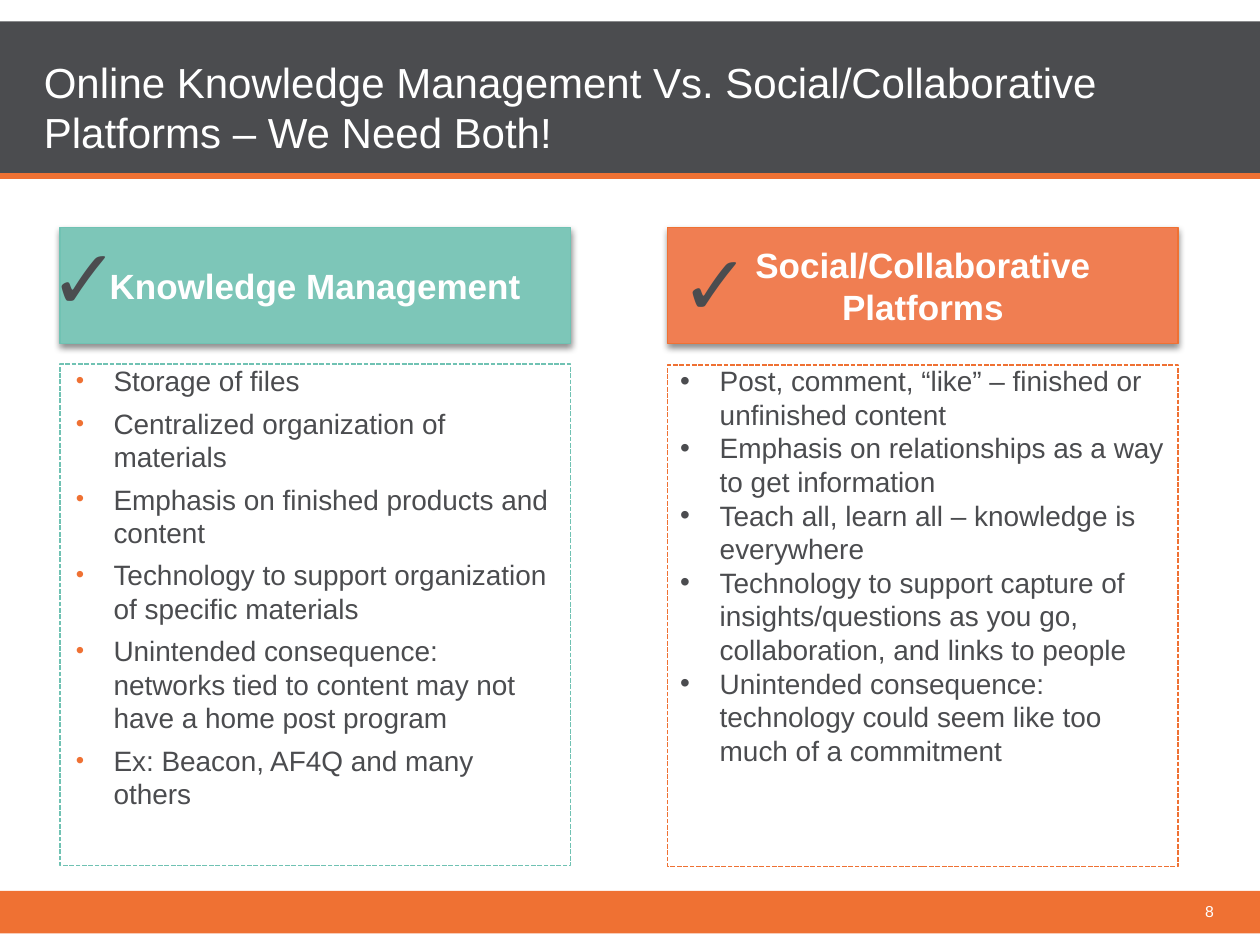
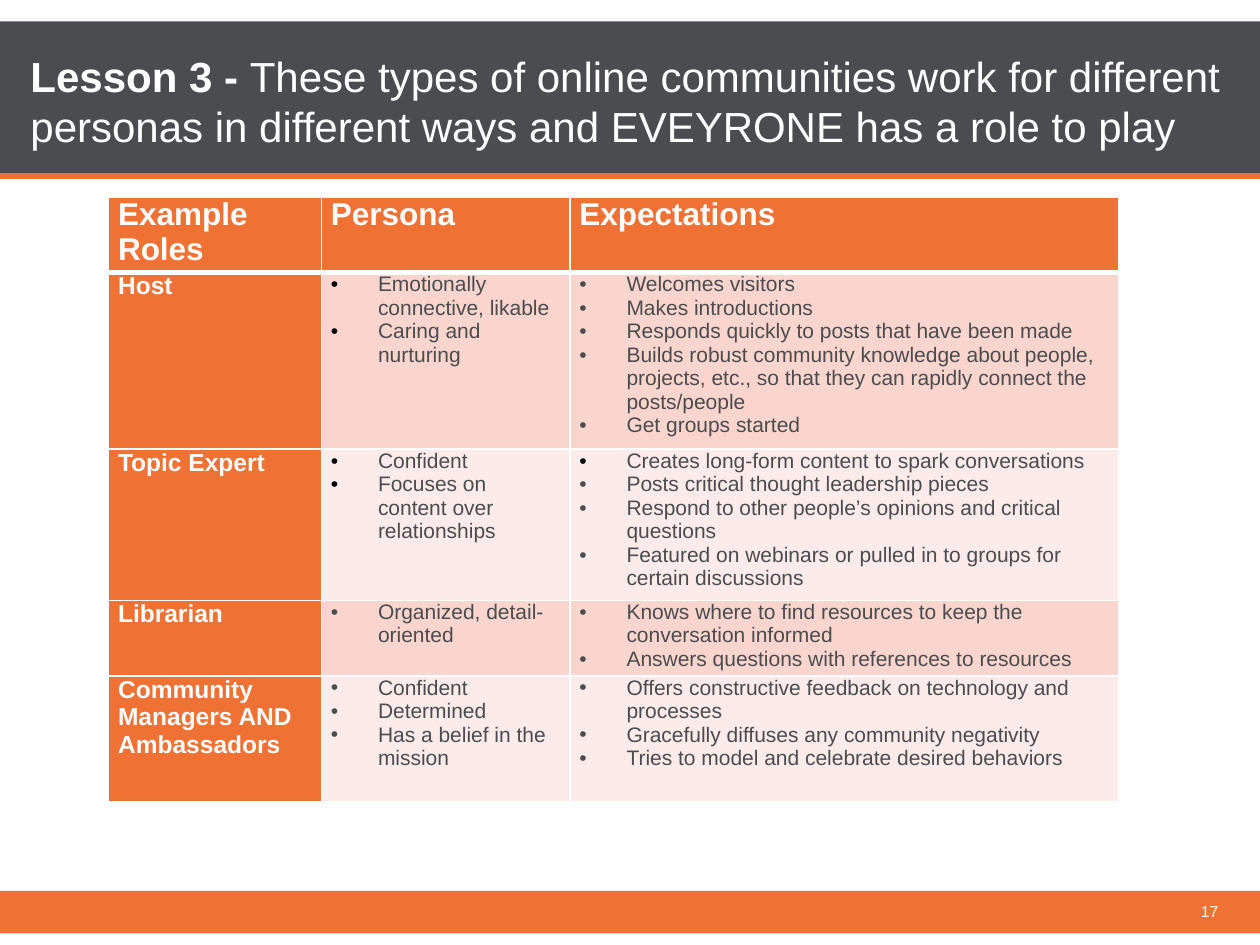
"""Build two slides on online communities: a platform comparison and a table of roles."""
from dataclasses import dataclass
from typing import Optional

from lxml import etree
from pptx import Presentation
from pptx.dml.color import RGBColor
from pptx.enum.dml import MSO_LINE
from pptx.enum.shapes import MSO_CONNECTOR, MSO_SHAPE
from pptx.enum.text import MSO_ANCHOR, MSO_AUTO_SIZE, PP_ALIGN
from pptx.oxml.ns import qn
from pptx.util import Cm, Pt

RECTANGLE = MSO_SHAPE.RECTANGLE
STRAIGHT = MSO_CONNECTOR.STRAIGHT
FINE_DASH = MSO_LINE.SQUARE_DOT
LEFT, CENTER = PP_ALIGN.LEFT, PP_ALIGN.CENTER
TOP, MIDDLE, BOTTOM = MSO_ANCHOR.TOP, MSO_ANCHOR.MIDDLE, MSO_ANCHOR.BOTTOM
FIXED_SIZE = MSO_AUTO_SIZE.NONE

FONT = "Arial"
WHITE, BLACK, GREY = "FFFFFF", "000000", "4B4C4F"
ORANGE, TEAL = "EF7133", "70C2B3"
ROW_TINTS = ("F9D5CE", "FCEBE8")
PAGE_WIDTH, PAGE_HEIGHT = 25.4, 19.05
TITLE_ONLY = 5


@dataclass(frozen=True)
class Area:
    """A rectangle on the page in centimetres."""
    left: float
    top: float
    width: float
    height: float

    def lengths(self) -> tuple:
        """Return left, top, width and height as lengths."""
        return Cm(self.left), Cm(self.top), Cm(self.width), Cm(self.height)


@dataclass(frozen=True)
class Style:
    """The look of a run of text."""
    size: float
    color: str = GREY
    bold: bool = False


@dataclass(frozen=True)
class Bullet:
    """The indent, colour and relative size of a bullet."""
    indent: float
    color: Optional[str] = None
    percent: Optional[int] = None


@dataclass(frozen=True)
class Platform:
    """One column of the comparison."""
    heading: str
    fill: str
    line: str
    left: float
    frame_top: float
    check: Area
    list_area: Area
    bullet: Bullet
    gap: float
    points: tuple


@dataclass(frozen=True)
class Points:
    """The bulleted lines of a table cell, the first few with black bullets."""
    lines: tuple
    black: int = 0


@dataclass(frozen=True)
class Role:
    """One row of the roles table."""
    name: str
    height: float
    persona: Points
    expectations: Points


HEADING = Style(20, WHITE, True)
BODY = Style(16)
CHECK = Style(48)
TITLE = Style(24, WHITE)
TITLE_BOLD = Style(24, WHITE, True)
PAGE_NUMBER = Style(9, WHITE)
TABLE_HEAD = Style(18, WHITE, True)
ROLE_NAME = Style(14, WHITE, True)
TABLE_BODY = Style(12)

PLATFORMS = (
    Platform("Knowledge Management", "7DC6B8", TEAL, 1.21, 7.34,
             Area(0.75, 4.42, 3.84, 2.31), Area(1.28, 7.21, 10.21, 10.62),
             Bullet(0.76, ORANGE, 85), 5, (
                 "Storage of files",
                 "Centralized organization of materials",
                 "Emphasis on finished products and content",
                 "Technology to support organization of specific materials",
                 "Unintended consequence: networks tied to content may not have a home post program",
                 "Ex: Beacon, AF4Q and many others")),
    Platform("Social/Collaborative Platforms", "F07E52", ORANGE, 13.46, 7.36,
             Area(13.46, 4.55, 3.84, 2.31), Area(13.46, 7.21, 10.29, 8.46),
             Bullet(0.8), 0, (
                 "Post, comment, “like” – finished or unfinished content",
                 "Emphasis on relationships as a way to get information",
                 "Teach all, learn all – knowledge is everywhere",
                 "Technology to support capture of insights/questions as you go, "
                 "collaboration, and links to people",
                 "Unintended consequence: technology could seem like too much of a commitment")),
)

TABLE_HEADINGS = ("Example Roles", "Persona", "Expectations")
COLUMN_WIDTHS = (4.29, 5.01, 11.07)
HEAD_HEIGHT = 1.5
ROLES = (
    Role("Host", 3.54,
         Points(("Emotionally connective, likable", "Caring and nurturing"), 2),
         Points(("Welcomes visitors", "Makes introductions",
                 "Responds quickly to posts that have been made",
                 "Builds robust community knowledge about people, projects, etc., "
                 "so that they can rapidly connect the posts/people",
                 "Get groups started"))),
    Role("Topic Expert", 3.04,
         Points(("Confident", "Focuses on content over relationships"), 2),
         Points(("Creates long-form content to spark conversations",
                 "Posts critical thought leadership pieces",
                 "Respond to other people’s opinions and critical questions",
                 "Featured on webinars or pulled in to groups for certain discussions"), 1)),
    Role("Librarian", 1.52,
         Points(("Organized, detail-oriented",)),
         Points(("Knows where to find resources to keep the conversation informed",
                 "Answers questions with references to resources"))),
    Role("Community Managers AND Ambassadors", 2.54,
         Points(("Confident", "Determined", "Has a belief in the mission")),
         Points(("Offers constructive feedback on technology and processes",
                 "Gracefully diffuses any community negativity",
                 "Tries to model and celebrate desired behaviors"))),
)


def rgb(color: str) -> RGBColor:
    """Turn a hex string into a colour."""
    return RGBColor.from_string(color)


def add_color(parent, color: str):
    """Append a colour element to an XML parent and return it."""
    return etree.SubElement(parent, qn("a:srgbClr"), val=color)


def add_span(para, text: str, style: Style) -> None:
    """Append one formatted run."""
    span = para.add_run()
    span.text = text
    font = span.font
    font.name, font.size, font.bold = FONT, Pt(style.size), style.bold
    font.color.rgb = rgb(style.color)


def set_bullet(para, bullet: Bullet) -> None:
    """Give a paragraph a round bullet with a hanging indent."""
    props = para._p.get_or_add_pPr()
    props.set("marL", str(Cm(bullet.indent)))
    props.set("indent", str(-Cm(bullet.indent)))
    if bullet.color:
        add_color(etree.SubElement(props, qn("a:buClr")), bullet.color)
    if bullet.percent:
        etree.SubElement(props, qn("a:buSzPct"), val=str(bullet.percent * 1000))
    etree.SubElement(props, qn("a:buFont"), typeface=FONT)
    etree.SubElement(props, qn("a:buChar"), char="•")


def add_bullets(frame, lines: tuple, style: Style, bullets: list, gap: float = 0) -> None:
    """Fill a text frame with bulleted paragraphs."""
    for index, (line, bullet) in enumerate(zip(lines, bullets)):
        para = frame.add_paragraph() if index else frame.paragraphs[0]
        set_bullet(para, bullet)
        if index and gap:
            para.space_before = Pt(gap)
        add_span(para, line, style)


def add_box(page, area: Area, anchor=TOP):
    """Add a wrapping text box and return its text frame."""
    frame = page.shapes.add_textbox(*area.lengths()).text_frame
    frame.word_wrap, frame.vertical_anchor = True, anchor
    return frame


def add_panel(page, area: Area, fill: str, line: Optional[str] = None, width: float = 0.75):
    """Add a flat rectangle."""
    panel = page.shapes.add_shape(RECTANGLE, *area.lengths())
    panel.shadow.inherit = False
    panel.fill.solid()
    panel.fill.fore_color.rgb = rgb(fill)
    if line:
        panel.line.color.rgb = rgb(line)
        panel.line.width = Pt(width)
    else:
        panel.line.fill.background()
    return panel


def add_shadow(panel) -> None:
    """Put a soft shadow below a panel."""
    effects = panel.element.spPr.find(qn("a:effectLst"))
    shadow = etree.SubElement(effects, qn("a:outerShdw"), blurRad=str(Pt(4)),
                              dist=str(Pt(2)), dir="5400000", rotWithShape="0")
    etree.SubElement(add_color(shadow, BLACK), qn("a:alpha"), val="45000")


def add_page(deck, number: str, title_area: Area, title_spans: tuple):
    """Add a page with its bands, rule, title and page number."""
    page = deck.slides.add_slide(deck.slide_layouts[TITLE_ONLY])
    add_panel(page, Area(0, 0.43, PAGE_WIDTH, 3.12), GREY)
    add_panel(page, Area(0, 17.96, PAGE_WIDTH, 0.86), ORANGE)
    rule = page.shapes.add_connector(STRAIGHT, 0, Cm(3.55), Cm(PAGE_WIDTH), Cm(3.55))
    rule.line.color.rgb = rgb(ORANGE)
    rule.line.width = Pt(3)
    etree.SubElement(rule.element.spPr, qn("a:effectLst"))

    title = page.shapes.title
    title.element.getparent().append(title.element)
    title.left, title.top, title.width, title.height = title_area.lengths()
    frame = title.text_frame
    frame.word_wrap, frame.auto_size, frame.vertical_anchor = True, FIXED_SIZE, BOTTOM
    frame.paragraphs[0].alignment = LEFT
    for text, style in title_spans:
        add_span(frame.paragraphs[0], text, style)

    frame = add_box(page, Area(23.75, 17.75, 1.27, 1.22), MIDDLE)
    frame.margin_left = frame.margin_right = Cm(0.13)
    frame.paragraphs[0].alignment = CENTER
    add_span(frame.paragraphs[0], number, PAGE_NUMBER)
    return page


def add_platform(page, platform: Platform) -> None:
    """Draw one comparison column with heading, check mark and list."""
    heading = add_panel(page, Area(platform.left, 4.59, 10.29, 2.34), platform.fill, platform.line)
    add_shadow(heading)
    frame = heading.text_frame
    frame.word_wrap, frame.vertical_anchor = True, MIDDLE
    frame.paragraphs[0].alignment = CENTER
    add_span(frame.paragraphs[0], platform.heading, HEADING)
    border = add_panel(page, Area(platform.left, platform.frame_top, 10.29, 10.11),
                       WHITE, platform.line, 0.9)
    border.line.dash_style = FINE_DASH
    add_bullets(add_box(page, platform.list_area), platform.points, BODY,
                [platform.bullet] * len(platform.points), platform.gap)
    add_span(add_box(page, platform.check).paragraphs[0], "✓", CHECK)


def format_cell(cell, fill: str, top: float = 1, bottom: float = 1) -> None:
    """Set the margins, white borders and fill of a table cell."""
    cell.margin_left = cell.margin_right = Cm(0.19)
    cell.margin_top = cell.margin_bottom = 0
    props = cell._tc.get_or_add_tcPr()
    for side, width in (("L", 1), ("R", 1), ("T", top), ("B", bottom)):
        edge = etree.SubElement(props, qn(f"a:ln{side}"), w=str(Pt(width)))
        add_color(etree.SubElement(edge, qn("a:solidFill")), WHITE)
    cell.fill.solid()
    cell.fill.fore_color.rgb = rgb(fill)


def add_roles_table(page) -> None:
    """Draw the table of roles, personas and expectations."""
    heights = [HEAD_HEIGHT] + [role.height for role in ROLES]
    area = Area(2.19, 3.97, sum(COLUMN_WIDTHS), sum(heights))
    table = page.shapes.add_table(len(heights), len(COLUMN_WIDTHS), *area.lengths()).table
    table.horz_banding = False
    for column, width in zip(table.columns, COLUMN_WIDTHS):
        column.width = Cm(width)
    for row, height in zip(table.rows, heights):
        row.height = Cm(height)
    for column, heading in enumerate(TABLE_HEADINGS):
        cell = table.cell(0, column)
        format_cell(cell, ORANGE, bottom=3)
        add_span(cell.text_frame.paragraphs[0], heading, TABLE_HEAD)
    for row, role in enumerate(ROLES, 1):
        top = 3 if row == 1 else 1
        name_cell = table.cell(row, 0)
        format_cell(name_cell, ORANGE, top)
        add_span(name_cell.text_frame.paragraphs[0], role.name, ROLE_NAME)
        for column, points in enumerate((role.persona, role.expectations), 1):
            cell = table.cell(row, column)
            format_cell(cell, ROW_TINTS[(row - 1) % 2], top)
            bullets = [Bullet(0.95, BLACK if index < points.black else None)
                       for index in range(len(points.lines))]
            add_bullets(cell.text_frame, points.lines, TABLE_BODY, bullets)


def main() -> None:
    """Build and save the deck."""
    deck = Presentation()
    deck.slide_width, deck.slide_height = Cm(PAGE_WIDTH), Cm(PAGE_HEIGHT)
    comparison = add_page(deck, "8", Area(0.63, 1.19, 23.7, 2.11), (
        ("Online Knowledge Management Vs. Social/Collaborative Platforms – We Need Both!", TITLE),))
    for platform in PLATFORMS:
        add_platform(comparison, platform)
    roles = add_page(deck, "17", Area(0.36, 1.06, 24.56, 2.11), (
        ("Lesson 3 - ", TITLE_BOLD),
        ("These types of online communities work for different personas in different ways "
         "and EVEYRONE has a role to play", TITLE)))
    add_roles_table(roles)
    deck.save("out.pptx")


if __name__ == "__main__":
    main()
